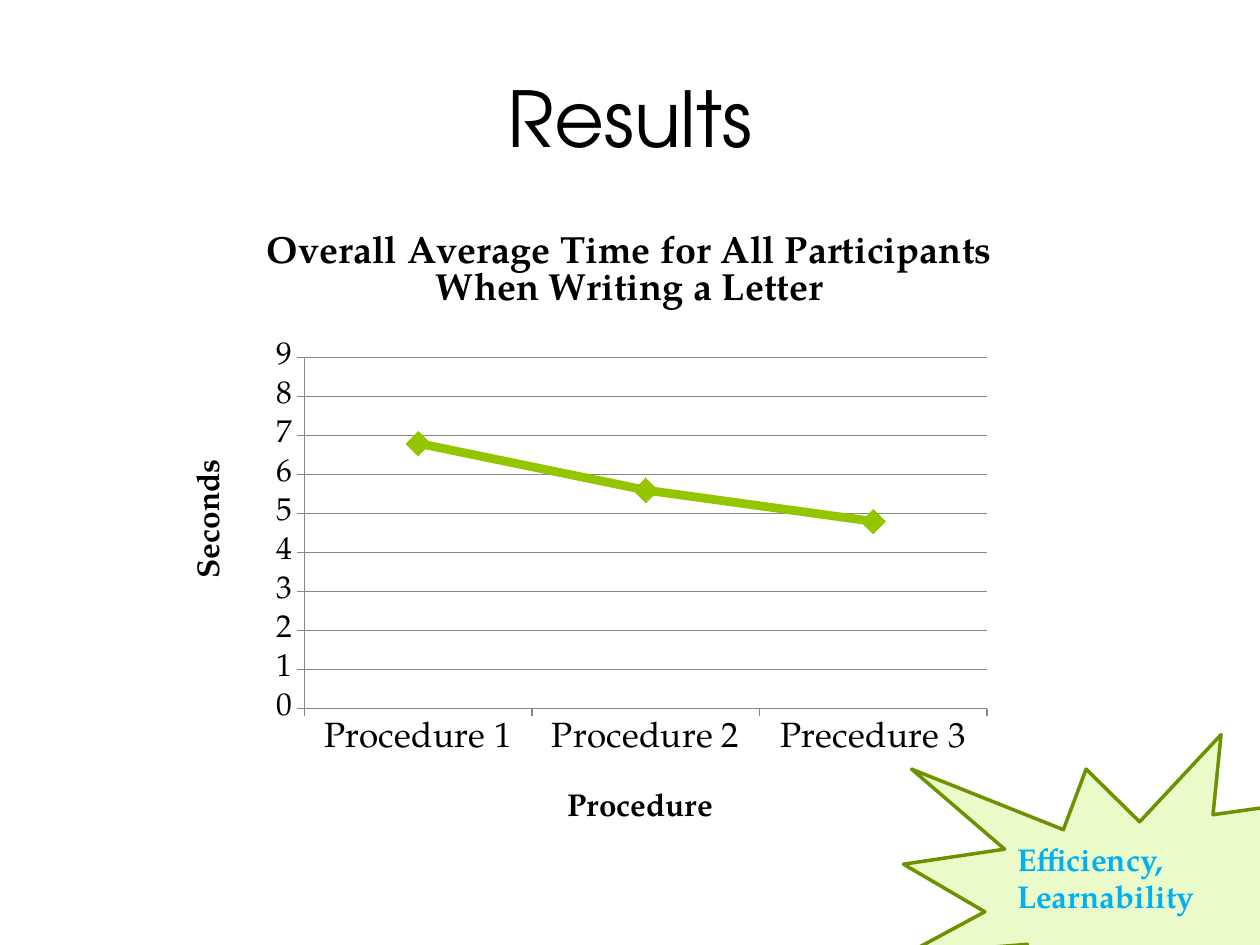
from pptx import Presentation
from pptx.chart.data import CategoryChartData as Data
from pptx.dml.color import RGBColor as Rgb
from pptx.enum.chart import XL_CHART_TYPE as Kind, XL_MARKER_STYLE as Mark
from pptx.enum.chart import XL_TICK_MARK as Tick
from pptx.enum.shapes import MSO_SHAPE as Geo
from pptx.enum.text import MSO_ANCHOR as Anchor, PP_ALIGN as Align
from pptx.oxml import parse_xml
from pptx.oxml.ns import nsdecls, qn
from pptx.util import Inches, Pt

INK = {
    "text": "000000",
    "grid": "868686",
    "line": "94C600",
    "burst": "EAFAC9",
    "edge": "6D9200",
    "note": "00B0F0",
}
HEAD = "TeX Gyre Adventor"
BODY = "TeX Gyre Pagella"


def tone(name):
    return Rgb.from_string(INK[name])


def assign(item, values):
    for key, value in values.items():
        setattr(item, key, value)


def style(font, size, face=BODY, ink="text", bold=False):
    assign(font, {"size": Pt(size), "name": face, "bold": bold})
    font.color.rgb = tone(ink)


def stroke(line, ink, width):
    line.color.rgb = tone(ink)
    line.width = Pt(width)


def place(node, spots, inner=False):
    old = node.find(qn("c:layout"))
    if old is not None:
        node.remove(old)
    parts = ['<c:layoutTarget val="inner"/>'] if inner else []
    parts += [f'<c:{side}Mode val="edge"/>' for side in "xy"]
    parts += [f'<c:{side} val="{value}"/>' for side, value in spots.items()]
    layout = parse_xml(
        f"<c:layout {nsdecls('c')}><c:manualLayout>{''.join(parts)}"
        "</c:manualLayout></c:layout>"
    )
    node.insert(0 if inner else 1, layout)


def add_title(slide, text, box):
    frame = slide.shapes.add_textbox(*map(Inches, box)).text_frame
    assign(frame, {"word_wrap": True, "vertical_anchor": Anchor.MIDDLE})
    para = frame.paragraphs[0]
    assign(para, {"text": text, "alignment": Align.CENTER})
    style(para.runs[0].font, 44, HEAD)


def label(title, lines, size):
    frame = title.text_frame
    frame.text = "\n".join(lines)
    for para in frame.paragraphs:
        style(para.font, size, bold=True)
        style(para.runs[0].font, size, bold=True)


def set_axis(axis, name, size, spots):
    label(axis.axis_title, [name], 18)
    place(axis.axis_title.element, spots)
    assign(axis, {"major_tick_mark": Tick.OUTSIDE, "minor_tick_mark": Tick.NONE})
    style(axis.tick_labels.font, size)
    stroke(axis.format.line, "grid", 0.75)


def add_graph(slide, box):
    data = Data()
    data.categories = ["Procedure 1", "Procedure 2", "Precedure 3"]
    data.add_series("Series 1", (6.8, 5.6, 4.8))
    chart = slide.shapes.add_chart(
        Kind.LINE_MARKERS, *map(Inches, box), data
    ).chart
    chart.has_legend = False
    style(chart.font, 18)
    label(
        chart.chart_title,
        ["Overall Average Time for All Participants", "When Writing a Letter"],
        21.6,
    )
    chart.chart_title.element.find(qn("c:overlay")).set("val", "1")
    area = chart.element.find(".//" + qn("c:plotArea"))
    place(area, {"x": 0.21, "y": 0.24, "w": 0.6, "h": 0.56}, True)
    spots = area[0][0]
    for side, value in zip("xywh", (0.213, 0.236, 0.602, 0.563)):
        spots.find(qn(f"c:{side}")).set("val", str(value))
    set_axis(chart.category_axis, "Procedure", 20, {"x": 0.44, "y": 0.92})
    axis = chart.value_axis
    set_axis(axis, "Seconds", 18, {"x": 0.11, "y": 0.39})
    assign(axis, {"minimum_scale": 0, "maximum_scale": 9, "major_unit": 1})
    stroke(axis.major_gridlines.format.line, "grid", 0.75)
    plot = chart.plots[0]
    plot.vary_by_categories = False
    trend = plot.series[0]
    trend.smooth = False
    stroke(trend.format.line, "line", 5)
    assign(trend.marker, {"style": Mark.DIAMOND, "size": 14})
    trend.marker.format.fill.solid()
    trend.marker.format.fill.fore_color.rgb = tone("line")
    stroke(trend.marker.format.line, "line", 0.75)


def add_burst(slide, text, box):
    burst = slide.shapes.add_shape(Geo.EXPLOSION1, *map(Inches, box))
    burst.shadow.inherit = False
    burst.fill.solid()
    burst.fill.fore_color.rgb = tone("burst")
    stroke(burst.line, "edge", 2)
    frame = burst.text_frame
    assign(frame, {
        "word_wrap": True,
        "vertical_anchor": Anchor.MIDDLE,
        "margin_bottom": Inches(0.2),
    })
    para = frame.paragraphs[0]
    assign(para, {"text": text, "alignment": Align.LEFT})
    for run in para.runs:
        style(run.font, 18, ink="note", bold=True)


def main():
    deck = Presentation()
    assign(deck, {"slide_width": Inches(10), "slide_height": Inches(7.5)})
    slide = deck.slides.add_slide(deck.slide_layouts[6])
    add_title(slide, "Results", (0.5, 0.3, 9, 1.25))
    add_graph(slide, (0.5, 1.67, 9, 4.95))
    add_burst(slide, "Efficiency,\vLearnability", (7.17, 5.83, 3.75, 2.58))
    deck.save("out.pptx")


if __name__ == "__main__":
    main()
